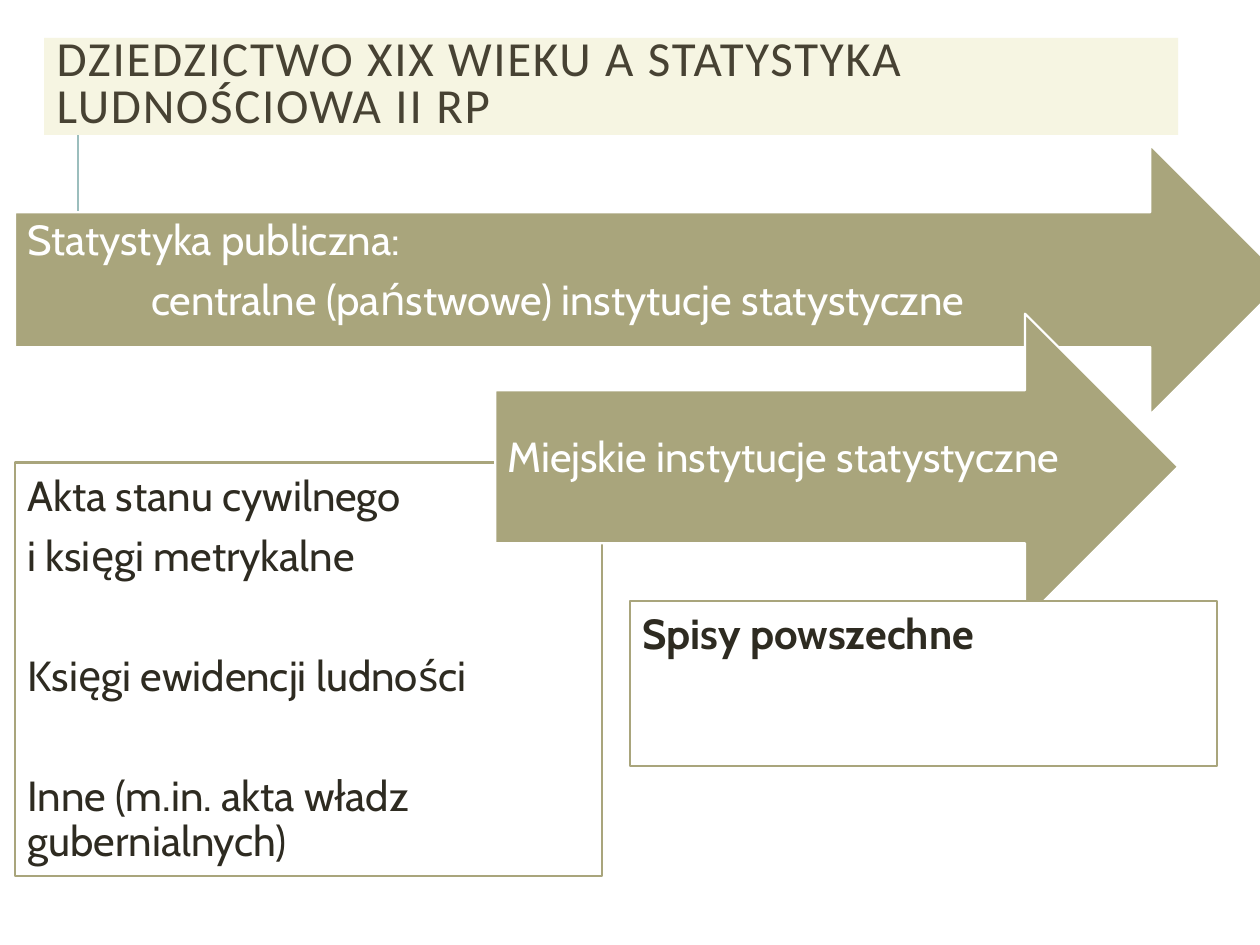
from pptx import Presentation
from pptx.dml.color import RGBColor
from pptx.enum.shapes import MSO_CONNECTOR, MSO_SHAPE
from pptx.enum.text import MSO_ANCHOR, MSO_AUTO_SIZE, PP_ALIGN
from pptx.oxml.ns import qn
from pptx.util import Inches, Pt
from lxml.etree import SubElement

OLIVE = RGBColor(0xA9, 0xA5, 0x7C)
CREAM = RGBColor(0xF6, 0xF5, 0xE2)
TEAL = RGBColor(0x9C, 0xBE, 0xBD)
BROWN = RGBColor(0x47, 0x42, 0x33)
DARK = RGBColor(0x2E, 0x2B, 0x21)
WHITE = RGBColor(0xFF, 0xFF, 0xFF)


class SlideBuilder:
    font = "Cabin"
    size = Pt(24)
    space_after = Pt(8.4)
    line_width = Pt(1.25)

    def __init__(self, slide):
        self.s = slide

    def title(self, text, left, top, width, height):
        sp = self.s.shapes.title
        sp.left, sp.top = Inches(left), Inches(top)
        sp.width, sp.height = Inches(width), Inches(height)
        sp.fill.solid()
        sp.fill.fore_color.rgb = CREAM
        tf = sp.text_frame
        tf.text = text
        tf.auto_size = MSO_AUTO_SIZE.NONE
        tf.vertical_anchor = MSO_ANCHOR.MIDDLE
        p = tf.paragraphs[0]
        p.alignment = PP_ALIGN.LEFT
        p.line_spacing = 0.8
        r = p.runs[0]
        r.font.name, r.font.size = "Calibri", Pt(28)
        r.font.color.rgb = BROWN
        r.font._element.set("spc", "100")

    def back_line(self, x, y1, y2):
        """Draw a vertical line behind everything else."""
        line = self.s.shapes.add_connector(
            MSO_CONNECTOR.STRAIGHT, Inches(x), Inches(y1), Inches(x), Inches(y2))
        line.line.color.rgb = TEAL
        line.line.width = Pt(1.5)
        SubElement(line._element.spPr, qn("a:effectLst"))
        self.s.shapes._spTree.insert(2, line._element)

    def block(self, kind, box, lines, fill, outline, color, margins, anchor, bold=False):
        """Add a filled shape; each line is (text, left indent, space before)."""
        sp = self.s.shapes.add_shape(kind, *map(Inches, box))
        sp.shadow.inherit = False
        sp.fill.solid()
        sp.fill.fore_color.rgb = fill
        sp.line.color.rgb = outline
        sp.line.width = self.line_width
        tf = sp.text_frame
        tf.word_wrap = True
        tf.vertical_anchor = anchor
        tf.margin_left, tf.margin_top, tf.margin_right, tf.margin_bottom = map(Inches, margins)
        for i, (text, indent, before) in enumerate(lines):
            p = tf.paragraphs[0] if i == 0 else tf.add_paragraph()
            p.text = text
            p.alignment = PP_ALIGN.LEFT
            p.line_spacing = 0.9
            p.space_before, p.space_after = Pt(before), self.space_after
            p._p.get_or_add_pPr().set("marL", str(Inches(indent)))
            font = p.runs[0].font
            font.name, font.size, font.bold = self.font, self.size, bold
            font.color.rgb = color

    def arrow(self, box, lines):
        self.block(MSO_SHAPE.RIGHT_ARROW, box, lines, OLIVE, WHITE, WHITE,
                   (0.1, 0.1, 0.28, 0.23), MSO_ANCHOR.MIDDLE)

    def panel(self, box, lines, bold=False):
        self.block(MSO_SHAPE.RECTANGLE, box, lines, WHITE, OLIVE, DARK,
                   (0.1, 0.1, 0.1, 0.1), MSO_ANCHOR.TOP, bold)


def main():
    prs = Presentation()
    prs.slide_width, prs.slide_height = Inches(10), Inches(7.5)
    b = SlideBuilder(prs.slides.add_slide(prs.slide_layouts[5]))
    gap = 34.2  # one line with its spacing, in points

    b.title("DZIEDZICTWO XIX WIEKU A STATYSTYKA LUDNOŚCIOWA II RP", 0.35, 0.3, 9, 0.77)
    b.back_line(0.62, 1.9, 0.9)
    b.arrow((0.12, 1.15, 10.08, 2.14), [
        ("Statystyka publiczna:", 0, 0),
        ("centralne (państwowe) instytucje statystyczne", 0.98, 0)])
    b.panel((0.12, 3.67, 4.66, 3.28), [
        ("Akta stanu cywilnego", 0, 0),
        ("i księgi metrykalne", 0, 0),
        ("Księgi ewidencji ludności", 0, gap),
        ("Inne (m.in. akta władz gubernialnych)", 0, gap)])
    b.arrow((3.93, 2.49, 5.42, 2.43), [("Miejskie instytucje statystyczne", 0, 0)])
    b.panel((5, 4.77, 4.66, 1.31), [("Spisy powszechne", 0, 0)], bold=True)
    prs.save("out.pptx")


if __name__ == "__main__":
    main()
